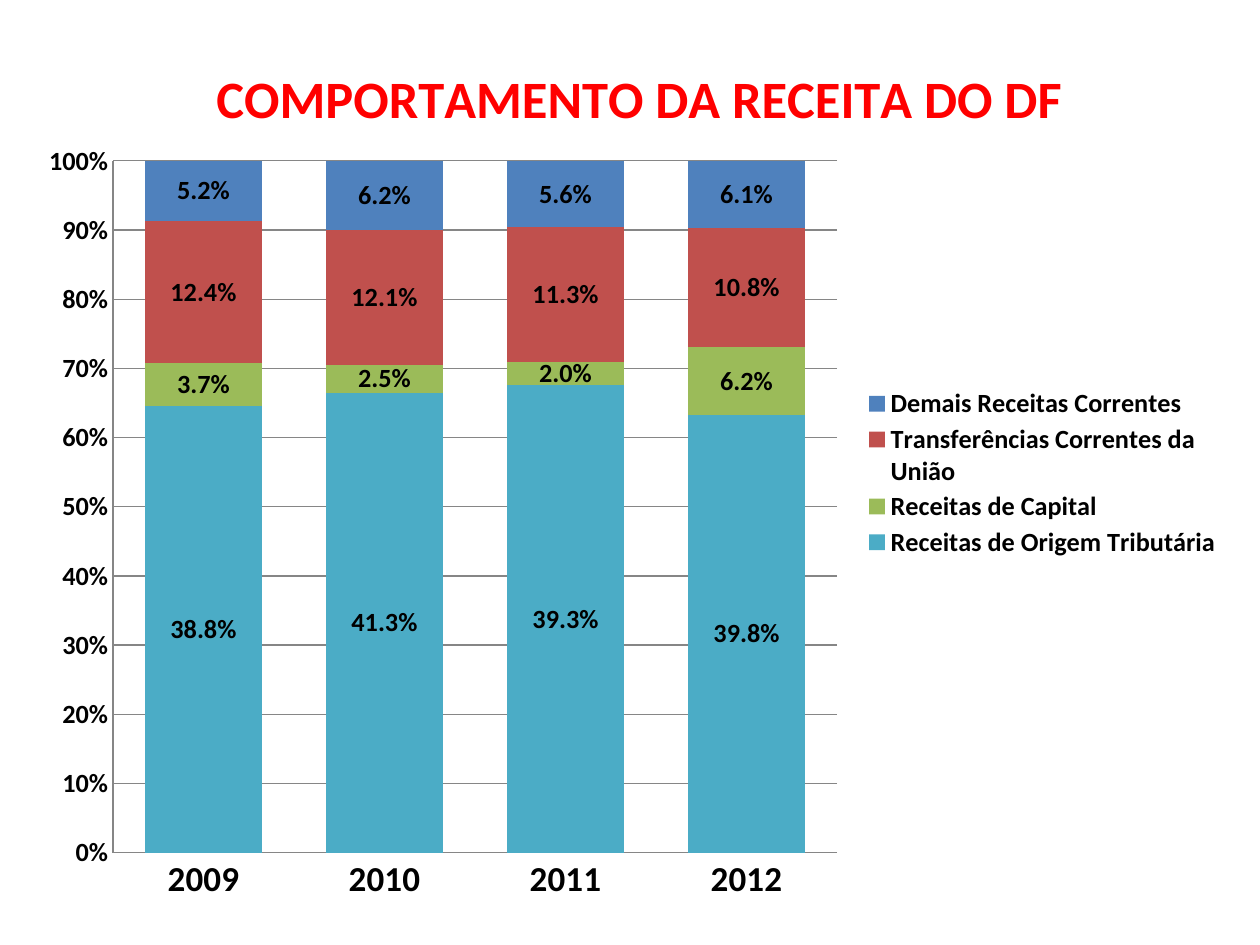
from lxml import etree
from pptx import Presentation
from pptx import util as u
from pptx.chart.data import CategoryChartData
from pptx.dml.color import RGBColor
from pptx.enum import chart as c
from pptx.oxml.ns import qn


def format_text(text, size=15, color="000000", bold=True):
    text.font.name = "Calibri"
    text.font.size = u.Pt(size)
    text.font.bold = bold
    text.font.color.rgb = RGBColor.from_string(color)


def place(element, index, inner=False, **fractions):
    for old in element.findall(qn("c:layout")):
        element.remove(old)
    layout = etree.Element(qn("c:layout"))
    element.insert(index, layout)
    manual = etree.SubElement(layout, qn("c:manualLayout"))
    if inner:
        etree.SubElement(manual, qn("c:layoutTarget"), val="inner")
    for tag in ("xMode", "yMode"):
        etree.SubElement(manual, qn("c:" + tag), val="edge")
    for tag, fraction in fractions.items():
        etree.SubElement(manual, qn("c:" + tag), val=str(fraction))


presentation = Presentation()
presentation.slide_width = u.Inches(10)
presentation.slide_height = u.Inches(7.5)
slide = presentation.slides.add_slide(presentation.slide_layouts[6])

revenues = [
    ("Receitas de Origem Tributária", (0.388, 0.413, 0.393, 0.398), "4BACC6"),
    ("Receitas de Capital", (0.037, 0.025, 0.020, 0.062), "9BBB59"),
    ("Transferências Correntes da União", (0.124, 0.121, 0.113, 0.108), "C0504D"),
    ("Demais Receitas Correntes", (0.052, 0.062, 0.056, 0.061), "4F81BD"),
]
data = CategoryChartData(number_format="0.0%")
data.categories = ["2009", "2010", "2011", "2012"]
for name, values, color in revenues:
    data.add_series(name, values)

chart = slide.shapes.add_chart(
    c.XL_CHART_TYPE.COLUMN_STACKED_100,
    u.Inches(0.2), u.Inches(0.21), u.Inches(9.61), u.Inches(7.09), data,
).chart
format_text(chart, size=10, bold=False)

chart.has_title = True
title = chart.chart_title
title.text_frame.text = "COMPORTAMENTO DA RECEITA DO DF"
format_text(title.text_frame.paragraphs[0].runs[0], size=30, color="FF0000")
place(title._element, 1, x=0.15, y=0.03)

plot = chart.plots[0]
plot.gap_width = 55
plot.overlap = 100
plot.vary_by_categories = False
for series, (name, values, color) in zip(plot.series, revenues):
    series.format.fill.solid()
    series.format.fill.fore_color.rgb = RGBColor.from_string(color)
    labels = series.data_labels
    labels.show_value = True
    labels.number_format = "0.0%"
    labels.number_format_is_linked = False
    labels.position = c.XL_LABEL_POSITION.CENTER
    format_text(labels)
place(chart._chartSpace.chart.plotArea, 0, inner=True, x=0.0725, y=0.1505, w=0.598, h=0.7745)

for axis, size in ((chart.category_axis, 20), (chart.value_axis, 15)):
    axis.major_tick_mark = c.XL_TICK_MARK.NONE
    axis.minor_tick_mark = c.XL_TICK_MARK.NONE
    axis.format.line.color.rgb = RGBColor.from_string("868686")
    axis.format.line.width = u.Pt(0.75)
    format_text(axis.tick_labels, size=size)

value_axis = chart.value_axis
value_axis.minimum_scale = 0
value_axis.maximum_scale = 1
value_axis.major_unit = 0.1
value_axis.tick_labels.number_format = "0%"
value_axis.tick_labels.number_format_is_linked = False
value_axis.has_major_gridlines = True
value_axis.major_gridlines.format.line.color.rgb = RGBColor.from_string("868686")
value_axis.major_gridlines.format.line.width = u.Pt(0.75)

chart.has_legend = True
legend = chart.legend
legend.position = c.XL_LEGEND_POSITION.RIGHT
legend.include_in_layout = False
format_text(legend)
place(legend._element, 1, x=0.69, y=0.4, w=0.3, h=0.2)

presentation.save("out.pptx")
